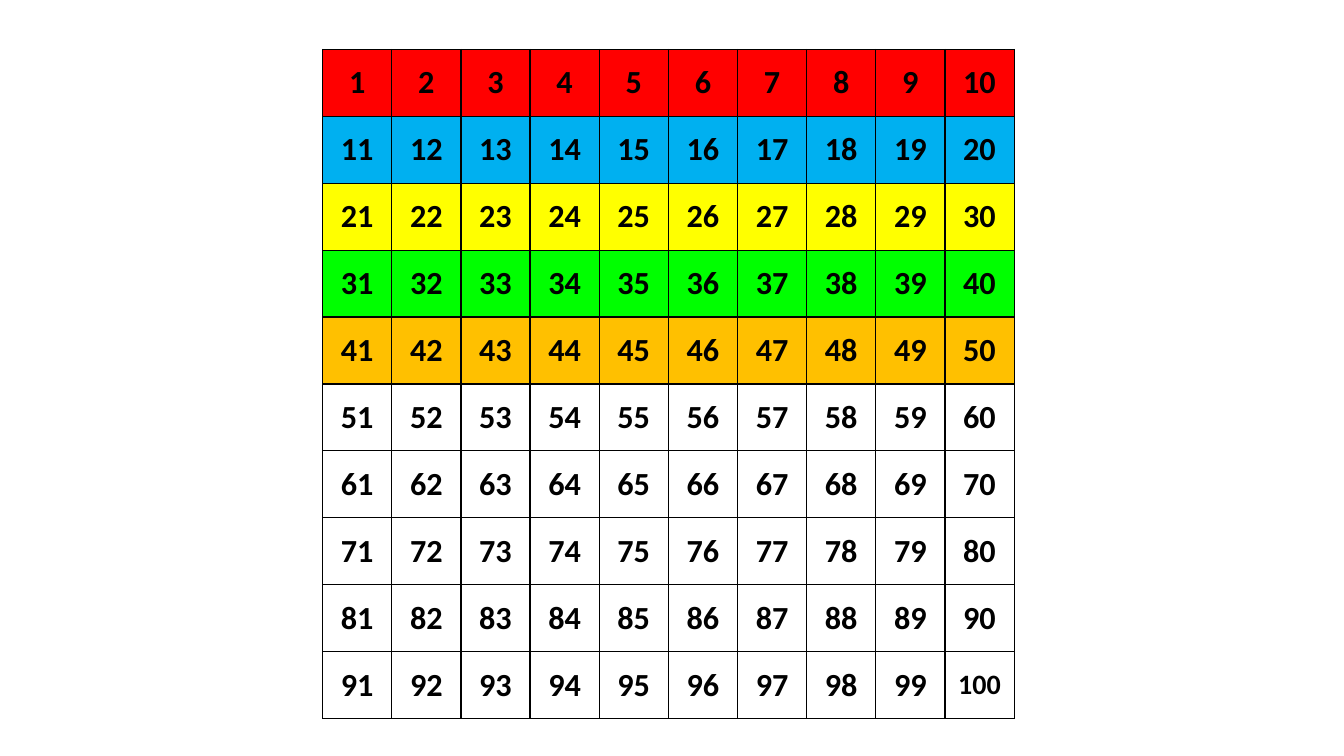
from lxml import etree
from pptx import Presentation
from pptx.dml.color import RGBColor
from pptx.enum.text import MSO_ANCHOR, PP_ALIGN
from pptx.oxml.ns import qn
from pptx.util import Inches, Pt

MIDDLE = MSO_ANCHOR.MIDDLE
CENTER = PP_ALIGN.CENTER

COLORS = {
    "red": "FF0000",
    "blue": "00B0F0",
    "yellow": "FFFF00",
    "green": "00FF00",
    "orange": "FFC000",
    "black": "000000",
}
BANDS = ["red", "blue", "yellow", "green", "orange"]
SIDE = 10
NUMBERS = [[row * SIDE + col + 1 for col in range(SIDE)] for row in range(SIDE)]

SLIDE = (13.33, 7.5)
GRID = (3.2, 0.49, 6.86, 6.64)
CELL = {
    "vertical_anchor": MIDDLE,
    "margin_left": Inches(0.13),
    "margin_right": Inches(0.13),
    "margin_top": Inches(0.06),
    "margin_bottom": Inches(0.06),
}
FONT = {"name": "Calibri", "bold": True}


def apply(target, values):
    for name, value in values.items():
        setattr(target, name, value)


def add_borders(cell):
    props = cell._tc.get_or_add_tcPr()
    for edge in ("a:lnL", "a:lnR", "a:lnT", "a:lnB"):
        line = etree.SubElement(props, qn(edge), w=str(Pt(1)))
        fill = etree.SubElement(line, qn("a:solidFill"))
        etree.SubElement(fill, qn("a:srgbClr"), val=COLORS["black"])


def fill_cell(cell, number, band):
    apply(cell, CELL)
    add_borders(cell)
    if band:
        cell.fill.solid()
        cell.fill.fore_color.rgb = RGBColor.from_string(COLORS[band])
    else:
        cell.fill.background()
    para = cell.text_frame.paragraphs[0]
    para.alignment = CENTER
    run = para.add_run()
    run.text = str(number)
    apply(run.font, FONT)
    run.font.size = Pt(20 if number == 100 else 23)
    run.font.color.rgb = RGBColor.from_string(COLORS["black"])


def main():
    deck = Presentation()
    deck.slide_width, deck.slide_height = map(Inches, SLIDE)
    slide = deck.slides.add_slide(deck.slide_layouts[6])
    table = slide.shapes.add_table(SIDE, SIDE, *map(Inches, GRID)).table
    apply(table, {"first_row": False, "horz_banding": False})
    for row, numbers in enumerate(NUMBERS):
        band = BANDS[row] if row < len(BANDS) else None
        for col, number in enumerate(numbers):
            fill_cell(table.cell(row, col), number, band)
    deck.save("out.pptx")


if __name__ == "__main__":
    main()
